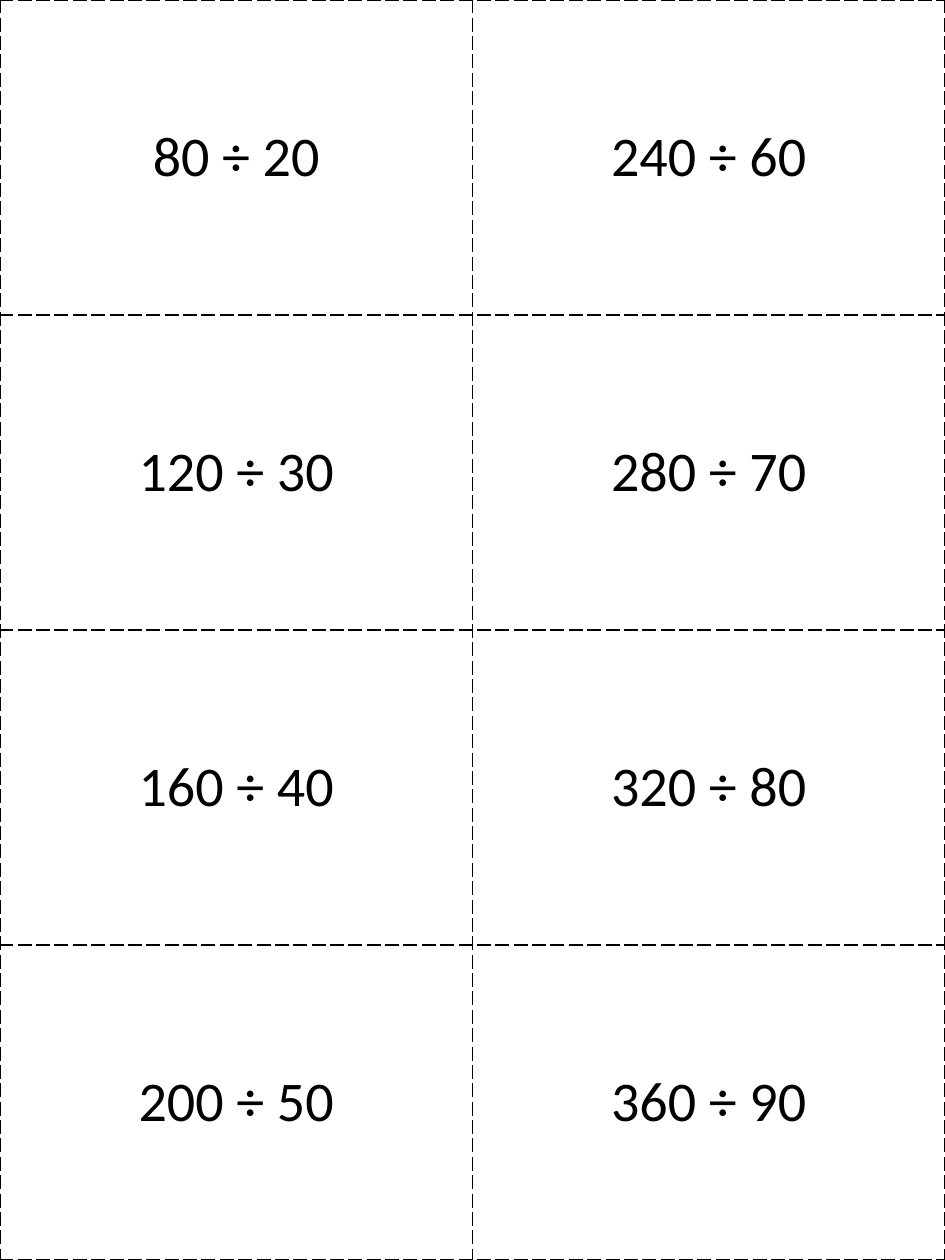
from lxml import etree
from pptx import Presentation
from pptx import util as u
from pptx.dml import color
from pptx.enum import text
from pptx.oxml import ns

ROWS, COLUMNS = 4, 2
QUOTIENT = 4
FIRST_DIVISOR, DIVISOR_STEP = 20, 10
INK, PAPER = "000000", "FFFFFF"


def rgb(value):
    return color.RGBColor.from_string(value)


def add_cut_lines(cell, line_color, width):
    properties = cell._tc.get_or_add_tcPr()
    for side in ("lnL", "lnR", "lnT", "lnB"):
        line = etree.SubElement(properties, ns.qn(f"a:{side}"), w=str(u.Pt(width)))
        fill = etree.SubElement(line, ns.qn("a:solidFill"))
        etree.SubElement(fill, ns.qn("a:srgbClr"), val=line_color)
        etree.SubElement(line, ns.qn("a:prstDash"), val="lgDash")


def fill_card(cell, problem):
    add_cut_lines(cell, INK, 1)
    cell.fill.solid()
    cell.fill.fore_color.rgb = rgb(PAPER)
    cell.vertical_anchor = text.MSO_ANCHOR.MIDDLE
    paragraph = cell.text_frame.paragraphs[0]
    paragraph.alignment = text.PP_ALIGN.CENTER
    run = paragraph.add_run()
    run.text = problem
    run.font.name = "Calibri"
    run.font.size = u.Pt(32)
    run.font.color.rgb = rgb(INK)


def add_card_sheet(slide, left, top, width, height):
    frame = slide.shapes.add_table(
        ROWS, COLUMNS, u.Pt(left), u.Pt(top), u.Pt(width), u.Pt(height)
    )
    table = frame.table
    table.first_row = False
    table.horz_banding = False
    for column in table.columns:
        column.width = u.Pt(width / COLUMNS)
    for row in table.rows:
        row.height = u.Pt(height / ROWS)
    for index in range(ROWS * COLUMNS):
        column, row = divmod(index, ROWS)
        divisor = FIRST_DIVISOR + DIVISOR_STEP * index
        fill_card(table.cell(row, column), f"{QUOTIENT * divisor} ÷ {divisor}")


def main():
    width, height = 540, 720
    presentation = Presentation()
    presentation.slide_width = u.Pt(width)
    presentation.slide_height = u.Pt(height)
    slide = presentation.slides.add_slide(presentation.slide_layouts[6])
    add_card_sheet(slide, 0, 0, width, height)
    presentation.save("out.pptx")


if __name__ == "__main__":
    main()
